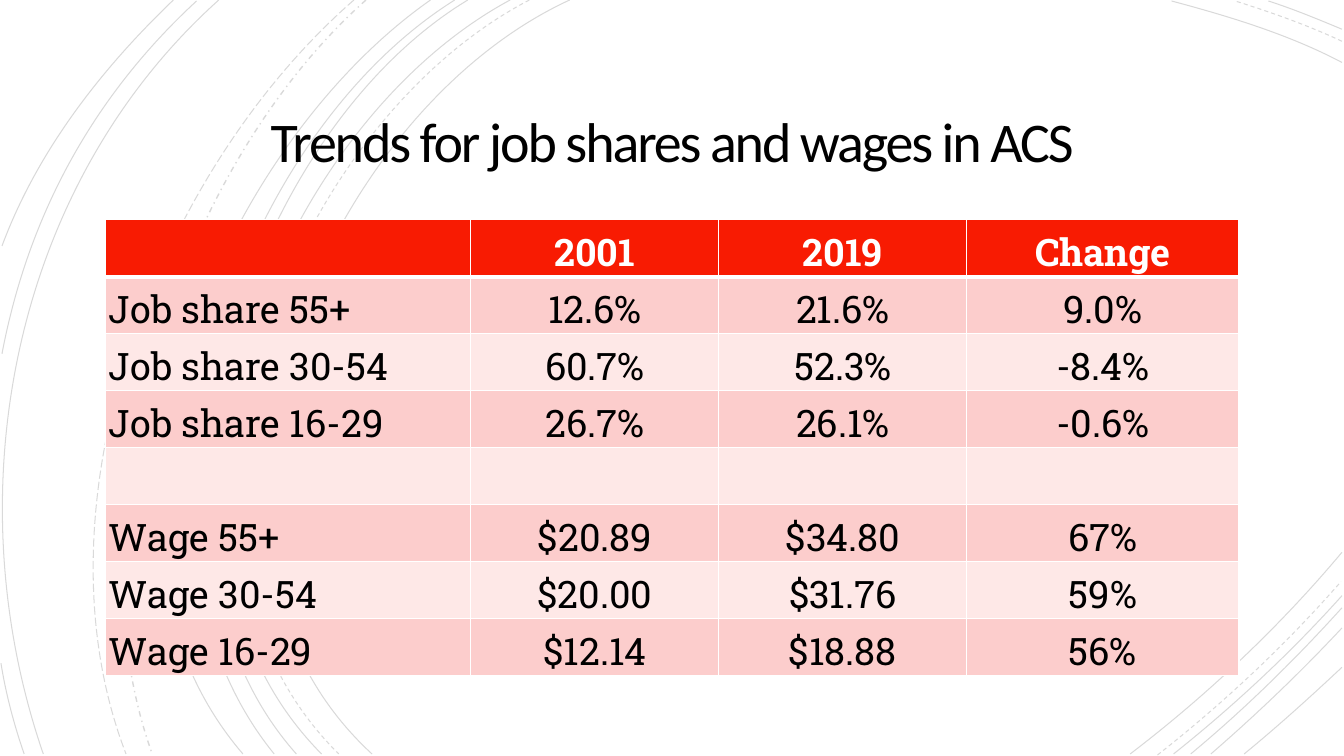
"""Build the slide on trends in job shares and wages by age group."""
from dataclasses import dataclass

from lxml import etree
from pptx import Presentation
from pptx import util as u
from pptx.dml.color import RGBColor
from pptx.enum import dml, text
from pptx.oxml.ns import qn


@dataclass(frozen=True)
class Theme:
    paper: str = "FFFFFF"
    ink: str = "000000"
    header: str = "F81B02"
    bands: tuple = ("FCCDCC", "FEE8E7")
    title_font: str = "Calibri"
    table_font: str = "Roboto Slab"
    title_size: float = 40
    table_size: float = 27
    arc_opacity: int = 15
    arc_width: float = 0.75
    cell_border: float = 1
    header_border: float = 3


COLUMNS, ROWS = 13.33, 7.5
CELL = u.Inches(1)

SOLID, DASH = dml.MSO_LINE.SOLID, dml.MSO_LINE.DASH
DASH_DOT, LONG_DASH = dml.MSO_LINE.DASH_DOT, dml.MSO_LINE.LONG_DASH

ARCS = {
    SOLID: [
        ((5.65, 0), (3.15, 1.15), (1.43, 5.4), (3.69, 7.48)),
        ((13.31, 0.62), (12.78, 0.34), (12.18, 0.16), (11.62, 0.01)),
        ((11.21, 7.48), (11.97, 6.9), (12.69, 6.22), (13.31, 5.48)),
        ((5.06, 0), (2.7, 1.27), (1.1, 5.37), (3.19, 7.48)),
        ((13.31, 0.29), (13.07, 0.19), (12.83, 0.09), (12.58, 0.01)),
        ((11.64, 7.48), (12.23, 7.01), (12.8, 6.48), (13.31, 5.91)),
        ((4.64, 0), (2.44, 1.33), (1.1, 5.41), (2.94, 7.48)),
        ((11.81, 7.48), (12.34, 7.04), (12.84, 6.55), (13.31, 6.03)),
        ((4.51, 0), (2.31, 1.38), (0.97, 5.33), (2.72, 7.48)),
        ((12.01, 7.48), (12.46, 7.09), (12.9, 6.67), (13.31, 6.23)),
        ((4.27, 0), (2.17, 1.47), (0.53, 5.29), (2.41, 7.48)),
        ((12.34, 7.48), (12.67, 7.21), (12.99, 6.92), (13.31, 6.62)),
        ((2.17, 0), (0.11, 1.85), (-0.46, 4.9), (0.43, 7.48)),
        ((1.95, 0.01), (0.92, 0.96), (0.28, 2.14), (0.02, 3.51)),
        ((0.01, 6.58), (0.06, 6.89), (0.14, 7.19), (0.24, 7.48)),
        ((1.72, 0), (1, 0.69), (0.37, 1.5), (0.02, 2.44)),
    ],
    DASH: [
        ((5.25, 0), (2.85, 1.25), (1.23, 5.37), (3.36, 7.48)),
        ((13.31, 0.41), (12.97, 0.25), (12.6, 0.12), (12.25, 0.01)),
        ((11.48, 7.49), (12.13, 6.98), (12.75, 6.4), (13.3, 5.77)),
    ],
    DASH_DOT: [((3.63, 0), (1.76, 1.66), (0.65, 5.09), (1.51, 7.48))],
    LONG_DASH: [((3.51, 0), (1.57, 1.69), (0.29, 4.99), (1.25, 7.48))],
}

TRENDS = [
    ("", "2001", "2019", "Change"),
    ("Job share 55+", "12.6%", "21.6%", "9.0%"),
    ("Job share 30-54", "60.7%", "52.3%", "-8.4%"),
    ("Job share 16-29", "26.7%", "26.1%", "-0.6%"),
    ("", "", "", ""),
    ("Wage 55+", "$20.89", "$34.80", "67%"),
    ("Wage 30-54", "$20.00", "$31.76", "59%"),
    ("Wage 16-29", "$12.14", "$18.88", "56%"),
]


def grid(*lengths):
    return [u.Emu(round(length * CELL)) for length in lengths]


def write(frame, wording, *, font, size, color, bold=False,
          align=text.PP_ALIGN.CENTER, line_spacing=None, tracking=None):
    paragraph = frame.paragraphs[0]
    paragraph.alignment = align
    paragraph.line_spacing = line_spacing
    run = paragraph.add_run()
    run.text = wording
    run.font.name, run.font.size, run.font.bold = font, u.Pt(size), bold
    run.font.color.rgb = RGBColor.from_string(color)
    if tracking is not None:
        run.font._element.set("spc", str(round(tracking * 100)))


class SlideBuilder:
    def __init__(self, slide, theme):
        self.slide, self.theme = slide, theme

    def background(self):
        fill = self.slide.background.fill
        fill.solid()
        fill.fore_color.rgb = RGBColor.from_string(self.theme.paper)

    def arc(self, points, dash):
        start, *bends = [grid(*point) for point in points]
        outline = self.slide.shapes.build_freeform(*start)
        outline.add_line_segments(bends, close=False)
        arc = outline.convert_to_shape()
        arc.shadow.inherit = False
        arc.fill.background()
        arc.line.width = u.Pt(1 if dash == DASH_DOT else self.theme.arc_width)
        arc.line.dash_style = dash
        arc.line.color.rgb = RGBColor.from_string(self.theme.ink)
        ink = next(arc.line._ln.iter(qn("a:srgbClr")))
        etree.SubElement(ink, qn("a:alpha"), val=str(self.theme.arc_opacity * 1000))
        route = next(arc._element.iter(qn("a:path")))
        bezier = etree.SubElement(route, qn("a:cubicBezTo"))
        for segment in route.findall(qn("a:lnTo")):
            bezier.append(segment[0])
            route.remove(segment)

    def title(self, wording, left, top, width, height):
        box = self.slide.shapes.add_textbox(*grid(left, top, width, height))
        frame = box.text_frame
        frame.word_wrap = True
        frame.vertical_anchor = text.MSO_ANCHOR.MIDDLE
        frame.margin_left = frame.margin_right = u.Inches(0.25)
        frame.margin_top = frame.margin_bottom = u.Inches(0.25)
        write(frame, wording, font=self.theme.title_font, size=self.theme.title_size,
              color=self.theme.ink, line_spacing=0.85, tracking=-1.5)

    def borders(self, cell, row):
        weights = {"lnL": 0, "lnR": 0, "lnT": row == 1, "lnB": row == 0}
        for side, heavy in weights.items():
            weight = self.theme.header_border if heavy else self.theme.cell_border
            border = etree.SubElement(cell._tc.get_or_add_tcPr(), qn(f"a:{side}"),
                                      w=str(u.Pt(weight)))
            paint = etree.SubElement(border, qn("a:solidFill"))
            etree.SubElement(paint, qn("a:srgbClr"), val=self.theme.paper)

    def table(self, records, left, top, widths, height):
        table = self.slide.shapes.add_table(
            len(records), len(widths), *grid(left, top, sum(widths), height)).table
        for column, width in zip(table.columns, grid(*widths)):
            column.width = width
        for row, record in enumerate(records):
            for column, wording in enumerate(record):
                self.cell(table.cell(row, column), wording, row, column)

    def cell(self, cell, wording, row, column):
        theme, is_header = self.theme, row == 0
        cell.vertical_anchor = text.MSO_ANCHOR.BOTTOM
        cell.margin_left = cell.margin_right = cell.margin_top = u.Inches(0.03)
        cell.margin_bottom = 0
        self.borders(cell, row)
        cell.fill.solid()
        shade = theme.header if is_header else theme.bands[(row - 1) % 2]
        cell.fill.fore_color.rgb = RGBColor.from_string(shade)
        if wording:
            write(cell.text_frame, wording, font=theme.table_font, size=theme.table_size,
                  color=theme.paper if is_header else theme.ink, bold=is_header,
                  align=text.PP_ALIGN.CENTER if column else text.PP_ALIGN.LEFT)


def main():
    deck = Presentation()
    deck.slide_width, deck.slide_height = grid(COLUMNS, ROWS)
    builder = SlideBuilder(deck.slides.add_slide(deck.slide_layouts[6]), Theme())
    builder.background()
    for dash, arcs in ARCS.items():
        for points in arcs:
            builder.arc(points, dash)
    builder.title("Trends for job shares and wages in ACS", 1.92, 0.87, 9.49, 1.15)
    builder.table(TRENDS, 1.05, 2.18, (3.62, 2.46, 2.46, 2.7), 4.52)
    deck.save("out.pptx")


if __name__ == "__main__":
    main()
